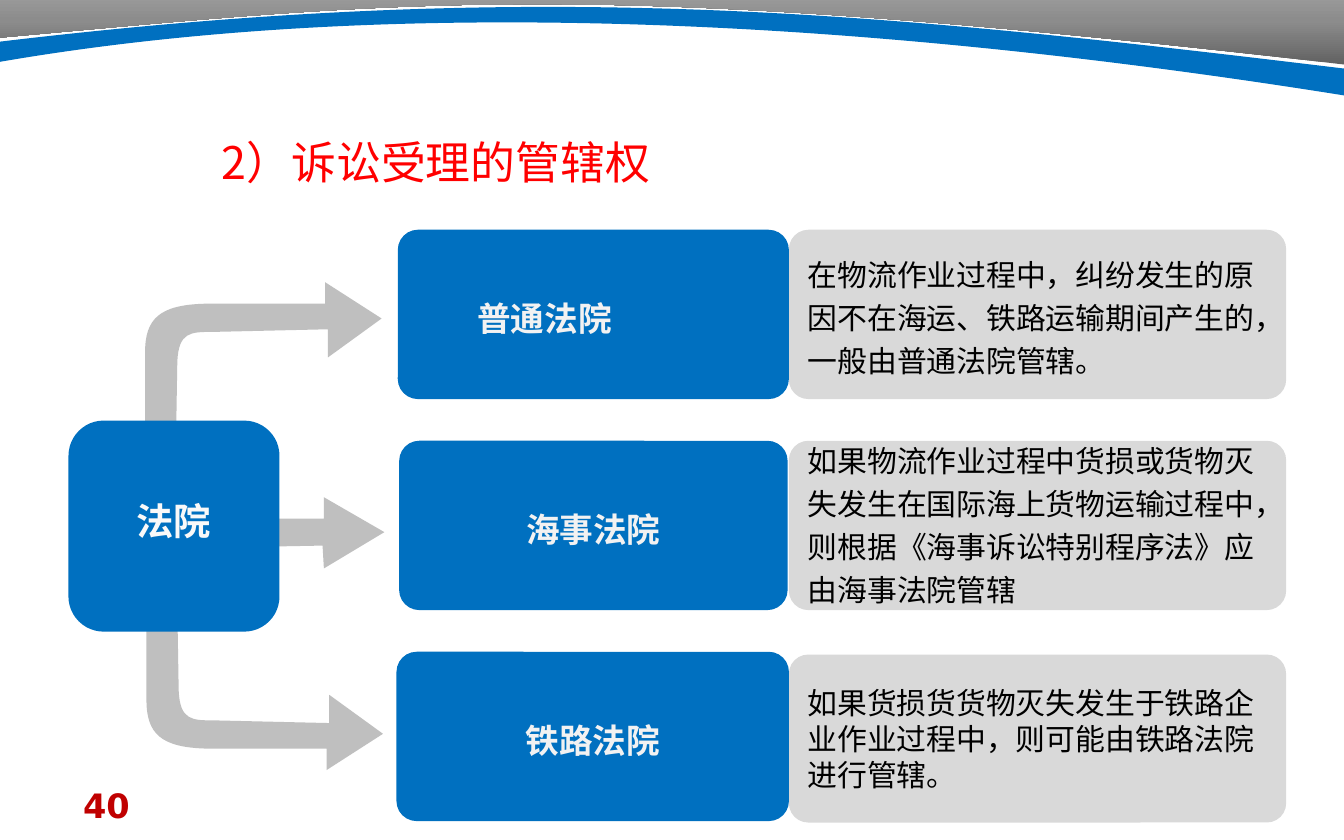
from copy import deepcopy

from lxml import etree
from pptx import Presentation
from pptx.dml.color import RGBColor
from pptx.enum.shapes import MSO_SHAPE
from pptx.enum.text import MSO_ANCHOR, MSO_AUTO_SIZE, PP_ALIGN
from pptx.oxml.ns import qn
from pptx.util import Inches, Pt

ROUNDED = MSO_SHAPE.ROUNDED_RECTANGLE
MIDDLE, TOP = MSO_ANCHOR.MIDDLE, MSO_ANCHOR.TOP
LEFT, CENTER, JUSTIFY = PP_ALIGN.LEFT, PP_ALIGN.CENTER, PP_ALIGN.JUSTIFY
NO_FIT = MSO_AUTO_SIZE.NONE

INSETS = (0.1, 0.05, 0.1, 0.05)


def color(hex_string):
    return RGBColor.from_string(hex_string)


def write(shape, text, size, hex_color, font, bold=False, align=LEFT,
          anchor=MIDDLE, spacing=1.0, margin=0, indent=0, insets=INSETS):
    """Put one formatted paragraph into a shape."""
    frame = shape.text_frame
    frame.word_wrap = True
    frame.auto_size = NO_FIT
    frame.vertical_anchor = anchor
    (frame.margin_left, frame.margin_top,
     frame.margin_right, frame.margin_bottom) = map(Inches, insets)
    paragraph = frame.paragraphs[0]
    paragraph.alignment = align
    paragraph.line_spacing = spacing
    paragraph.space_before = Pt(0)
    properties = paragraph._p.get_or_add_pPr()
    properties.set("marL", str(Inches(margin)))
    properties.set("indent", str(Inches(indent)))
    run = paragraph.add_run()
    run.text = text
    run.font.size = Pt(size)
    run.font.bold = bold
    run.font.color.rgb = color(hex_color)
    run.font.name = font
    latin = run._r.rPr.find(qn("a:latin"))
    east_asian = deepcopy(latin)
    east_asian.tag = qn("a:ea")
    latin.addnext(east_asian)


def mirror(outline, shift, height):
    """Flip an outline upside down and move it sideways."""
    return [tuple(height - value if i % 2 else value + shift
                  for i, value in enumerate(segment)) for segment in outline]


class CourtSlide:
    """Style and elements of the slide."""
    blue, gray, arrow_gray = "0070C0", "D9D9D9", "BFBFBF"
    heading_font, body_font = "Noto Sans CJK SC", "DejaVu Sans"

    def __init__(self, deck):
        self.slide = deck.slides.add_slide(deck.slide_layouts[5])

    def title(self, text):
        title = self.slide.shapes.title
        title.left, title.top = Inches(1.22), Inches(0.76)
        title.width, title.height = Inches(7.56), Inches(0.61)
        write(title, text, 24, "FF0000", self.heading_font, align=JUSTIFY,
              spacing=1.5, indent=0.33, insets=(0.1, 0.13, 0.1, 0.05))

    def page_number(self, number):
        box = self.slide.shapes.add_textbox(
            Inches(0.52), Inches(5.79), Inches(2.33), Inches(0.33))
        write(box, number, 18, "C00000", self.body_font, bold=True, anchor=TOP)

    def outline(self, segments, fill):
        """Draw a closed outline: two numbers are a point, six a cubic curve."""
        points = [(Inches(segment[i]), Inches(segment[i + 1]))
                  for segment in segments for i in range(0, len(segment), 2)]
        builder = self.slide.shapes.build_freeform(*points[0])
        builder.add_line_segments(points[1:], close=True)
        shape = builder.convert_to_shape()
        # Join the three lines of each curve into one Bezier segment
        lines = iter(shape._element.findall(".//" + qn("a:lnTo")))
        for segment in segments[1:]:
            first = next(lines)
            if len(segment) == 6:
                curve = etree.Element(qn("a:cubicBezTo"))
                first.addprevious(curve)
                for line in (first, next(lines), next(lines)):
                    curve.append(line[0])
                    line.getparent().remove(line)
        shape.shadow.inherit = False
        shape.line.fill.background()
        shape.fill.solid()
        shape.fill.fore_color.rgb = color(fill)
        return shape

    def gradient_outline(self, segments, stops):
        shape = self.outline(segments, stops[0][1])
        shape.fill.gradient()
        shape.fill.gradient_angle = 90
        stop_list = shape._element.spPr.find(".//" + qn("a:gsLst"))
        stop_list.insert(1, deepcopy(stop_list[0]))
        for stop, (position, hex_color) in zip(shape.fill.gradient_stops, stops):
            stop.position = position
            stop.color.rgb = color(hex_color)

    def box(self, left, top, width, height, fill, corner):
        box = self.slide.shapes.add_shape(
            ROUNDED, Inches(left), Inches(top), Inches(width), Inches(height))
        box.adjustments[0] = corner
        box.shadow.inherit = False
        box.fill.solid()
        box.fill.fore_color.rgb = color(fill)
        box.line.fill.background()
        return box

    def court(self, name, left, top, width, **text_format):
        court = self.box(left, top, width, 1.26, self.blue, 0.119)
        write(court, name, 18, "F2F2F2", self.heading_font, bold=True,
              spacing=1.2, **text_format)

    def jurisdiction(self, text, top, height=1.26, **text_format):
        panel = self.box(5.87, top, 3.7, height, self.gray, 0.115)
        write(panel, text, 16, "000000", self.body_font, **text_format)


def main():
    deck = Presentation()
    deck.slide_width, deck.slide_height = Inches(10), Inches(6.25)
    page = CourtSlide(deck)

    # Page number and curved header bands
    page.page_number("40")
    page.gradient_outline(
        [(10, 0.48), (4.43, -0.17, 3.08, 0, 0, 0.28),
         (0, 0.19), (0, -0.02), (10, -0.02), (10, 0.48)],
        [(0, "626262"), (0.5, "8C8C8C"), (1, "A6A6A6")])
    page.outline(
        [(0, 0.31), (4.03, -0.17, 6.52, 0.09, 10, 0.51), (10, 0.71),
         (6.05, 0.08, 2.67, 0, 0, 0.46), (0, 0.31)], page.blue)

    page.title("2）诉讼受理的管辖权")

    # Arrows: the upper one mirrors the lower one
    lower_arrow = [
        (1.31, 3.92), (1.33, 5.14), (1.34, 5.36, 1.43, 5.36, 1.59, 5.36),
        (2.45, 5.38), (2.45, 5.17), (2.85, 5.46), (2.43, 5.73), (2.43, 5.57),
        (2.43, 5.57, 1.85, 5.57, 1.53, 5.57), (1.2, 5.56, 1.09, 5.46, 1.09, 5.21),
        (1.09, 3.89), (1.13, 3.68, 1.26, 3.7, 1.31, 3.92)]
    middle_arrow = [(0.77, 4.09), (2.4, 4.06), (2.41, 4.23), (2.86, 3.96),
                    (2.41, 3.7), (2.41, 3.86), (0.77, 3.86), (0.77, 4.09)]
    for arrow in (lower_arrow, middle_arrow, mirror(lower_arrow, -0.01, 7.83)):
        page.outline(arrow, page.arrow_gray)

    # Each court and its jurisdiction
    page.jurisdiction("在物流作业过程中，纠纷发生的原因不在海运、铁路运输期间产生的，"
                      "一般由普通法院管辖。", 1.71, spacing=1.2)
    page.court("普通法院", 2.96, 1.71, 2.91, margin=0.45)
    page.jurisdiction("如果物流作业过程中货损或货物灭失发生在国际海上货物运输过程中，"
                      "则根据《海事诉讼特别程序法》应由海事法院管辖", 3.28,
                      spacing=1.2, insets=(0.1, 0.02, 0.1, 0.08))
    page.court("海事法院", 2.97, 3.28, 2.89, align=CENTER)
    page.jurisdiction("如果货损货货物灭失发生于铁路企业作业过程中，"
                      "则可能由铁路法院进行管辖。", 4.87, height=1.25)
    page.court("铁路法院", 2.95, 4.85, 2.92, align=CENTER)

    # Root of the diagram
    root = page.box(0.51, 3.13, 1.57, 1.57, page.blue, 0.167)
    write(root, "法院", 20, "F9F9F9", page.heading_font, bold=True, align=CENTER,
          spacing=1.2, insets=(0.14, 0.05, 0.14, 0.2))

    deck.save("out.pptx")


if __name__ == "__main__":
    main()
